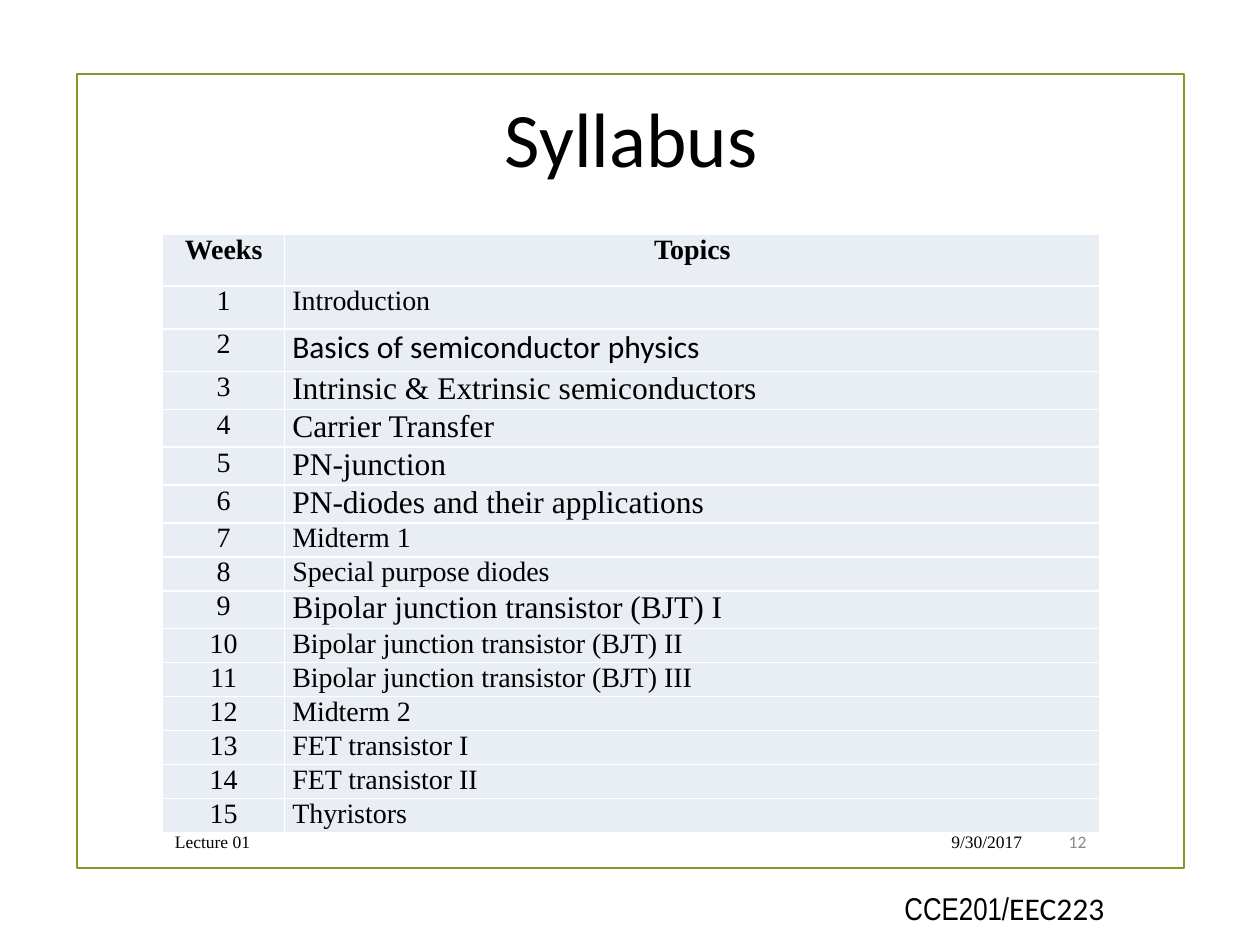
from dataclasses import dataclass

from lxml.etree import SubElement
from pptx import Presentation
from pptx.dml.color import RGBColor
from pptx.enum.shapes import MSO_SHAPE
from pptx.enum.text import MSO_ANCHOR, PP_ALIGN
from pptx.oxml.ns import qn
from pptx.util import Inches, Pt


@dataclass(frozen=True)
class Theme:
    ink: str = "000000"
    muted: str = "898989"
    frame: str = "83992A"
    cell: str = "E9EDF4"
    border: str = "FFFFFF"
    sans: str = "Calibri"
    serif: str = "Times New Roman"
    narrow: str = "Arial Narrow"
    title_size: int = 44
    large: int = 18
    body: int = 16
    small: int = 10


theme = Theme()


def add_span(para, text, font, size, color=theme.ink, bold=False):
    span = para.add_run()
    span.text = text
    span.font.name = font
    span.font.size = Pt(size)
    span.font.bold = bold
    span.font.color.rgb = RGBColor.from_string(color)


def style_cell(cell):
    cell.margin_left = cell.margin_right = Inches(0.06)
    cell.margin_top = cell.margin_bottom = 0
    properties = cell._tc.get_or_add_tcPr()
    for side in ("a:lnL", "a:lnR", "a:lnT", "a:lnB"):
        line = SubElement(properties, qn(side), w=str(Pt(1)))
        SubElement(SubElement(line, qn("a:solidFill")), qn("a:srgbClr"), val=theme.border)
    cell.fill.solid()
    cell.fill.fore_color.rgb = RGBColor.from_string(theme.cell)


deck = Presentation()
deck.slide_width, deck.slide_height = Inches(10), Inches(7.5)
page = deck.slides.add_slide(deck.slide_layouts[5])

# Frame
frame = page.shapes.add_shape(
    MSO_SHAPE.RECTANGLE, Inches(0.61), Inches(0.59), Inches(8.79), Inches(6.3))
frame.shadow.inherit = False
frame.fill.background()
frame.line.color.rgb = RGBColor.from_string(theme.frame)
frame.line.width = Pt(1.25)

# Title
title = page.shapes.title
title.left, title.top = Inches(1.29), Inches(0.67)
title.width, title.height = Inches(7.44), Inches(1.19)
title.text_frame.vertical_anchor = MSO_ANCHOR.TOP
para = title.text_frame.paragraphs[0]
para.alignment = PP_ALIGN.CENTER
add_span(para, "Syllabus", theme.sans, theme.title_size)

# Syllabus table: topic, font, size and row height for each week
plain = (theme.serif, theme.body, 0.27)
raised = (theme.serif, theme.large, 0.3)
topics = [
    ("Introduction", theme.serif, theme.body, 0.34),
    ("Basics of semiconductor physics", theme.sans, theme.large, 0.34),
    ("Intrinsic & Extrinsic semiconductors", *raised),
    ("Carrier Transfer", *raised),
    ("PN-junction", *raised),
    ("PN-diodes and their applications", *raised),
    ("Midterm 1", *plain),
    ("Special purpose diodes", *plain),
    ("Bipolar junction transistor (BJT) I", *raised),
    ("Bipolar junction transistor (BJT) II", *plain),
    ("Bipolar junction transistor (BJT) III", *plain),
    ("Midterm 2", *plain),
    ("FET transistor I", *plain),
    ("FET transistor II", *plain),
    ("Thyristors", *plain),
]
table = page.shapes.add_table(
    len(topics) + 1, 2, Inches(1.29), Inches(1.86), Inches(7.44), Inches(4.73)).table
table.first_row = table.horz_banding = False
table.columns[0].width, table.columns[1].width = Inches(0.97), Inches(6.47)

table.rows[0].height = Inches(0.41)
for column, heading in enumerate(("Weeks", "Topics")):
    cell = table.cell(0, column)
    style_cell(cell)
    para = cell.text_frame.paragraphs[0]
    para.alignment = PP_ALIGN.CENTER
    add_span(para, heading, theme.serif, theme.body, bold=True)

for week, (topic, font, size, height) in enumerate(topics, start=1):
    table.rows[week].height = Inches(height)
    week_cell, topic_cell = table.cell(week, 0), table.cell(week, 1)
    style_cell(week_cell)
    style_cell(topic_cell)
    para = week_cell.text_frame.paragraphs[0]
    para.alignment = PP_ALIGN.CENTER
    add_span(para, str(week), theme.serif, theme.body)
    add_span(topic_cell.text_frame.paragraphs[0], topic, font, size)

# Footer: lecture, date and page number
footers = [
    ("Lecture 01", 1.29, 5.58, PP_ALIGN.LEFT, theme.serif, theme.ink),
    ("9/30/2017", 6.95, 1.26, PP_ALIGN.RIGHT, theme.serif, theme.ink),
    ("12", 8.29, 0.43, PP_ALIGN.RIGHT, theme.sans, theme.muted),
]
for text, left, width, alignment, font, color in footers:
    box = page.shapes.add_textbox(Inches(left), Inches(6.52), Inches(width), Inches(0.31))
    box.text_frame.word_wrap = True
    box.text_frame.vertical_anchor = MSO_ANCHOR.MIDDLE
    para = box.text_frame.paragraphs[0]
    para.alignment = alignment
    add_span(para, text, font, theme.small, color)

# Course code
course = page.shapes.add_textbox(Inches(7.08), Inches(7.01), Inches(1.81), Inches(0.4))
course.text_frame.word_wrap = False
para = course.text_frame.paragraphs[0]
add_span(para, "CCE201/", theme.narrow, theme.large)
add_span(para, "EEC223", theme.sans, theme.large)

deck.save("out.pptx")
